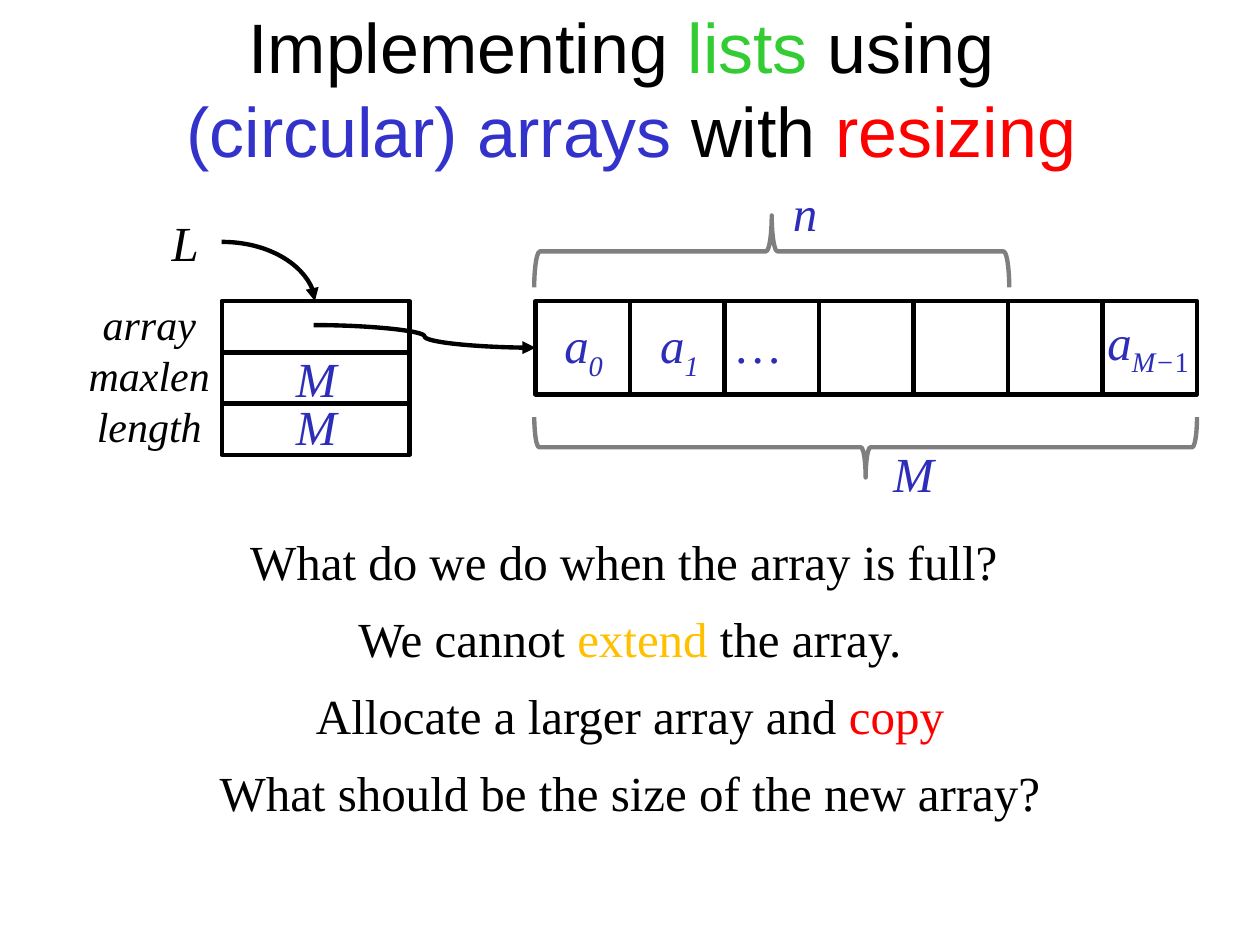
"""Build a slide on implementing lists with resizable circular arrays."""
from lxml import etree
from pptx import Presentation
from pptx.dml.color import RGBColor
from pptx.enum import shapes, text
from pptx.oxml.ns import qn
from pptx.util import Inches, Pt

COLORS = {"black": "000000", "green": "33CC33", "blue": "3333CC", "navy": "2D2DB9",
          "red": "FF0000", "gold": "FFC000"}
SERIF = {"name": "Times New Roman", "size": Pt(28)}
ITALIC = {**SERIF, "italic": True}
SMALL_ITALIC = {**ITALIC, "size": Pt(24)}
CENTER, LEFT = text.PP_ALIGN.CENTER, text.PP_ALIGN.LEFT


def add_run(paragraph, words, color, font):
    run = paragraph.add_run()
    run.text = words
    for name, value in font.items():
        setattr(run.font, name, value)
    run.font.color.rgb = RGBColor.from_string(COLORS[color])
    return run


def add_text(left, top, width, height, runs, font, align=CENTER):
    box = slide.shapes.add_textbox(Inches(left), Inches(top), Inches(width), Inches(height))
    frame = box.text_frame
    frame.word_wrap = True
    frame.auto_size = text.MSO_AUTO_SIZE.SHAPE_TO_FIT_TEXT
    frame.paragraphs[0].alignment = align
    for words, color in runs:
        add_run(frame.paragraphs[0], words, color, font)
    return frame.paragraphs[0]


presentation = Presentation()
presentation.slide_width, presentation.slide_height = Inches(10), Inches(7.5)
slide = presentation.slides.add_slide(presentation.slide_layouts[5])

title = slide.shapes.title
title.left, title.top, title.width, title.height = [Inches(n) for n in (0.01, 0.07, 10, 1.25)]
title.text_frame.vertical_anchor = text.MSO_ANCHOR.MIDDLE
heading = title.text_frame.paragraphs[0]
heading.alignment = CENTER
title_lines = [
    [("Implementing", "black"), (" lists ", "green"), ("using ", "black")],
    [("(circular) arrays ", "blue"), ("with ", "black"), ("resizing", "red")],
]
for index, line in enumerate(title_lines):
    if index:
        heading.add_line_break()
    for words, color in line:
        add_run(heading, words, color, {"name": "Arial", "size": Pt(40)})

record_fields = [(1.76, 2.39 + 0.405 * row, 1.49, 0.41) for row in range(3)]
array_cells = [(4.25 + 0.75 * column, 2.39, 0.75, 0.74) for column in range(7)]
for bounds in record_fields + array_cells:
    cell = slide.shapes.add_shape(shapes.MSO_SHAPE.RECTANGLE, *[Inches(n) for n in bounds])
    cell.shadow.inherit = False
    cell.fill.background()
    cell.line.color.rgb = RGBColor.from_string(COLORS["black"])
    cell.line.width = Pt(2.5)

for row, field in enumerate(["array", "maxlen", "length"]):
    add_text(0.53, 2.32 + 0.405 * row, 1.31, 0.5, [(field, "black")], SMALL_ITALIC)

add_text(1.18, 1.64, 0.58, 0.57, [("L", "black")], ITALIC)
for symbol, left, top in [("M", 2.05, 2.72), ("M", 2.05, 3.1), ("M", 6.79, 3.47), ("n", 5.93, 1.4)]:
    add_text(left, top, 0.92, 0.57, [(symbol, "navy")], ITALIC)

array_items = [
    (4.38, 2.45, 0.59, "a", [("0", True)]),
    (5.14, 2.45, 0.59, "a", [("1", True)]),
    (5.75, 2.45, 0.59, "…", []),
    (8.69, 2.42, 0.92, "a", [("M−", True), ("1", False)]),
]
for left, top, width, symbol, subscripts in array_items:
    paragraph = add_text(left, top, width, 0.57, [(symbol, "navy")], ITALIC, LEFT)
    for words, italic in subscripts:
        run = add_run(paragraph, words, "navy", {**SERIF, "italic": italic})
        run.font._element.set("baseline", "-25000")

arrows = [
    ("curvedConnector3", 2.49, 2.58, 4.25, 2.76),
    ("curvedConnector2", 1.76, 1.92, 2.5, 2.39),
]
for geometry, *ends in arrows:
    arrow = slide.shapes.add_connector(shapes.MSO_CONNECTOR.CURVE, *[Inches(n) for n in ends])
    arrow.line.color.rgb = RGBColor.from_string(COLORS["black"])
    arrow.line.width = Pt(2.5)
    properties = arrow._element.spPr
    properties.find(qn("a:prstGeom")).set("prst", geometry)
    etree.SubElement(properties.find(qn("a:ln")), qn("a:tailEnd"), type="triangle")
    etree.SubElement(properties, qn("a:effectLst"))

braces = [(6.63, 0.92, 0.48, 5.26, 90), (5.84, 0.11, 0.57, 3.77, 270)]
for *bounds, rotation in braces:
    brace = slide.shapes.add_shape(shapes.MSO_SHAPE.RIGHT_BRACE, *[Inches(n) for n in bounds])
    brace.rotation = rotation
    brace.adjustments[0], brace.adjustments[1] = 0.08, 0.5
    brace.shadow.inherit = False
    brace.fill.background()
    brace.line.color.rgb = RGBColor.from_string(COLORS["black"])
    brace.line.width = Pt(2.5)
    line_color = brace.line._ln.find(".//" + qn("a:srgbClr"))
    etree.SubElement(line_color, qn("a:alpha"), val="50000")

statements = [
    [("What do we do when the array is full? ", "black")],
    [("We cannot ", "black"), ("extend", "gold"), (" the array.", "black")],
    [("Allocate a larger array and ", "black"), ("copy", "red")],
    [("What should be the size of the new array?", "black")],
]
for row, runs in enumerate(statements):
    add_text(0, 4.17 + 0.61 * row, 10, 0.57, runs, SERIF)

presentation.save("out.pptx")
